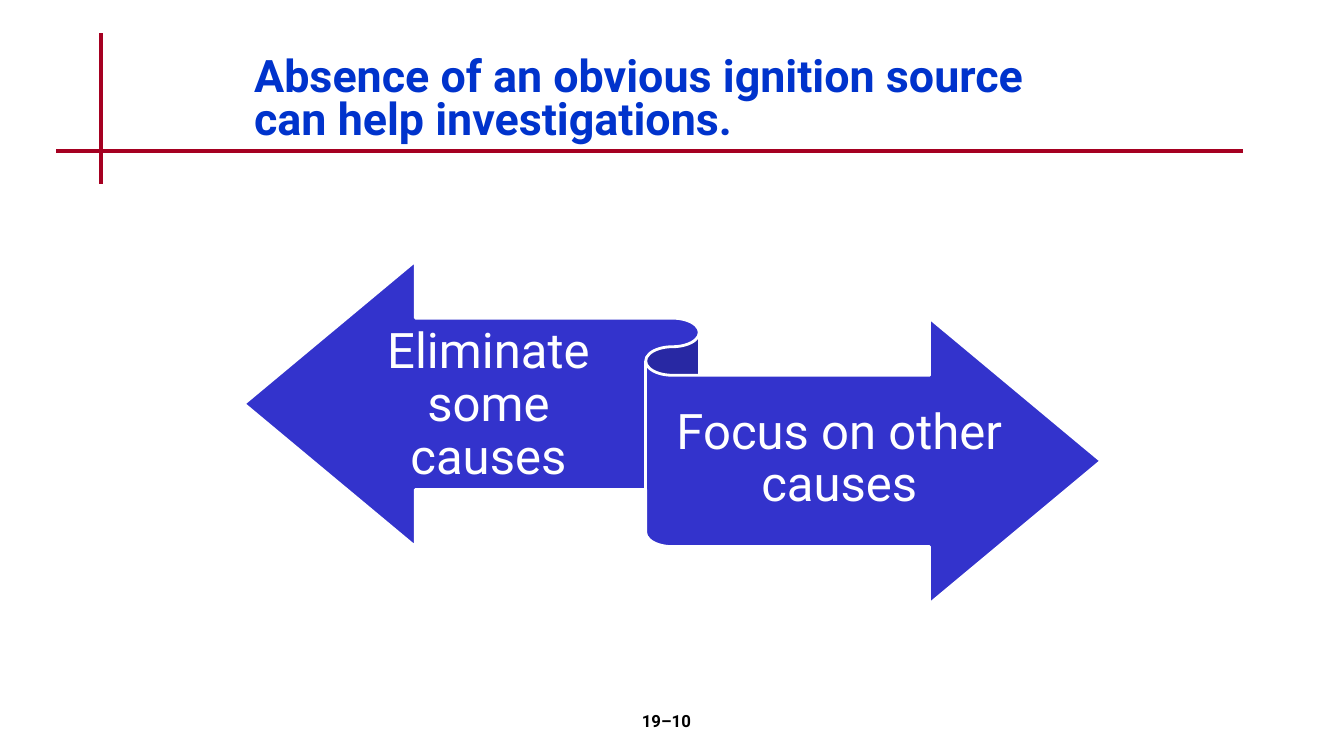
from pptx import Presentation
from pptx.dml.color import RGBColor
from pptx.enum.shapes import MSO_CONNECTOR, MSO_SHAPE
from pptx.enum.text import MSO_ANCHOR, PP_ALIGN
from pptx.oxml.ns import qn
from pptx.util import Inches, Pt
from lxml.etree import SubElement

CRIMSON = RGBColor(0xA5, 0x00, 0x21)
TITLE_BLUE = RGBColor(0x00, 0x33, 0xCC)
RIBBON_BLUE = RGBColor(0x33, 0x33, 0xCC)
WHITE = RGBColor(0xFF, 0xFF, 0xFF)
BLACK = RGBColor(0x00, 0x00, 0x00)


def add_text(paragraph, text, size, color, align, bold=False):
    paragraph.alignment = align
    run = paragraph.add_run()
    run.text = text
    run.font.name = "Roboto"
    run.font.size = Pt(size)
    run.font.bold = bold
    run.font.color.rgb = color


prs = Presentation()
prs.slide_width = Inches(13.33)
prs.slide_height = Inches(7.5)
slide = prs.slides.add_slide(prs.slide_layouts[5])
shapes = slide.shapes

# Crossed rules beside and below the title
for x1, y1, x2, y2 in [(1, 0.33, 1, 1.83), (0.56, 1.5, 12.33, 1.5)]:
    rule = shapes.add_connector(
        MSO_CONNECTOR.STRAIGHT, Inches(x1), Inches(y1), Inches(x2), Inches(y2))
    rule.line.color.rgb = CRIMSON
    rule.line.width = Pt(3)
    SubElement(rule._element.spPr, qn("a:effectLst"))

# Title
title = shapes.title
title.left, title.top = Inches(2.42), Inches(0.5)
title.width, title.height = Inches(7.95), Inches(1)
title.text_frame.word_wrap = True
title.text_frame.vertical_anchor = MSO_ANCHOR.MIDDLE
headline = title.text_frame.paragraphs[0]
headline.line_spacing = 0.8
add_text(headline, "Absence of an obvious ignition source can help investigations.",
         32, TITLE_BLUE, PP_ALIGN.LEFT, bold=True)

# Page number
page_number = shapes.add_textbox(Inches(5.22), Inches(7), Inches(2.78), Inches(0.5))
page_number.text_frame.word_wrap = True
add_text(page_number.text_frame.paragraphs[0], "19–10", 12, BLACK,
         PP_ALIGN.CENTER, bold=True)

# Two-way ribbon
ribbon = shapes.add_shape(MSO_SHAPE.LEFT_RIGHT_RIBBON,
                          Inches(2.42), Inches(2.59), Inches(8.5), Inches(3.4))
ribbon.shadow.inherit = False
ribbon.fill.solid()
ribbon.fill.fore_color.rgb = RIBBON_BLUE
ribbon.line.color.rgb = WHITE
ribbon.line.width = Pt(2)

# Text on each arm of the ribbon
for label, left, top, width in [("Eliminate some causes", 3.44, 3.19, 2.81),
                                ("Focus on other causes", 6.67, 3.73, 3.31)]:
    arm = shapes.add_textbox(Inches(left), Inches(top), Inches(width), Inches(1.67))
    frame = arm.text_frame
    frame.word_wrap = True
    frame.vertical_anchor = MSO_ANCHOR.MIDDLE
    frame.margin_left = frame.margin_right = 0
    frame.margin_top, frame.margin_bottom = Inches(0.14), Inches(0.15)
    frame.paragraphs[0].line_spacing = 0.9
    add_text(frame.paragraphs[0], label, 35, WHITE, PP_ALIGN.CENTER)

prs.save("out.pptx")
